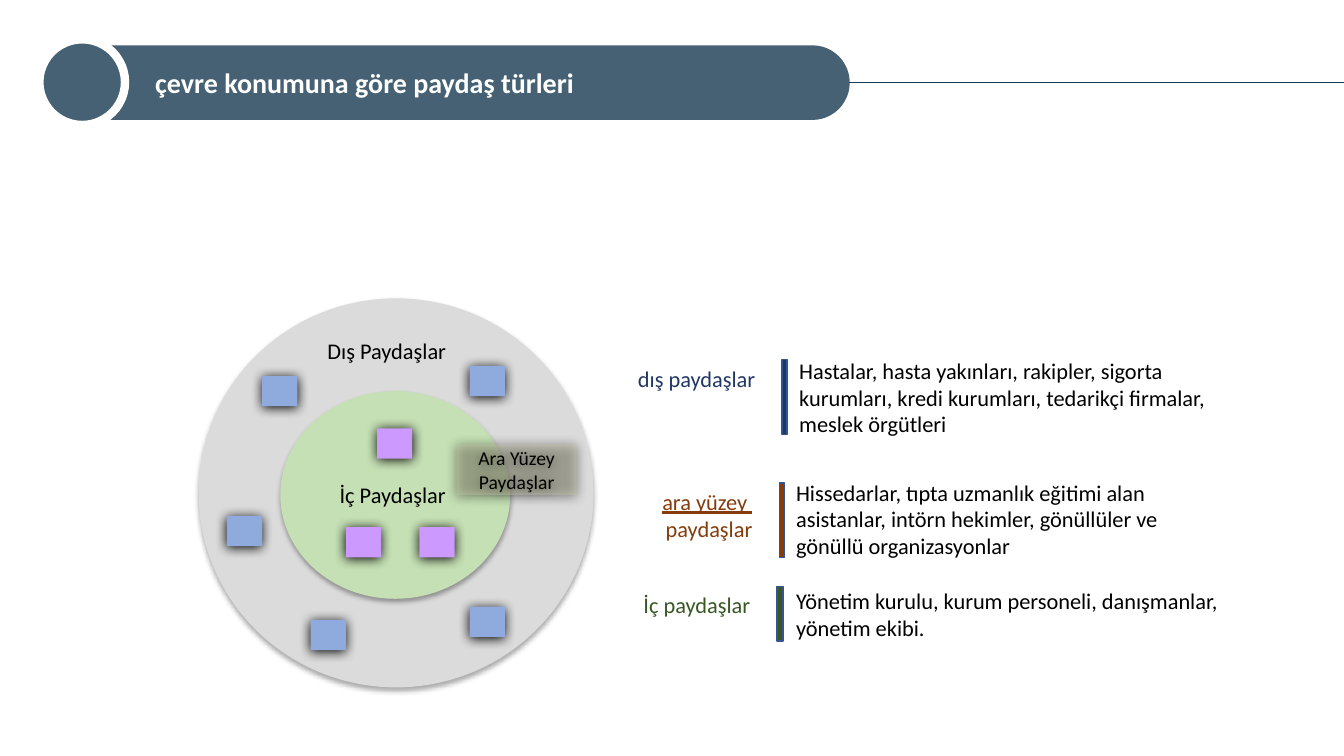
from dataclasses import dataclass
from typing import Optional

from lxml import etree
from pptx import Presentation
from pptx.dml.color import RGBColor
from pptx.enum.shapes import MSO_CONNECTOR, MSO_SHAPE
from pptx.enum.text import MSO_ANCHOR, MSO_AUTO_SIZE, PP_ALIGN
from pptx.oxml.ns import qn
from pptx.shapes.autoshape import Shape
from pptx.text.text import TextFrame
from pptx.util import Pt

RECT, OVAL, ROUNDED = MSO_SHAPE.RECTANGLE, MSO_SHAPE.OVAL, MSO_SHAPE.ROUNDED_RECTANGLE
STRAIGHT = MSO_CONNECTOR.STRAIGHT
LEFT, CENTER, RIGHT = PP_ALIGN.LEFT, PP_ALIGN.CENTER, PP_ALIGN.RIGHT
MIDDLE, TOP = MSO_ANCHOR.MIDDLE, MSO_ANCHOR.TOP
GROW = MSO_AUTO_SIZE.SHAPE_TO_FIT_TEXT

COLORS = {
    "slate": "456173", "white": "FFFFFF", "black": "000000", "rule": "1B3C59",
    "outer": "DBDBDB", "inner": "C5E0B4", "interface": "C5C4A7",
    "purple": "CC99FF", "blue": "8FAADC", "bar_edge": "325491",
    "navy": "203864", "brown": "843C0B", "green": "385723",
}
FONT = "Calibri"
SQUARE_WIDTH, SQUARE_HEIGHT = 25.2, 21.6
LABEL_OFFSET, LABEL_WIDTH, DESCRIPTION_WIDTH = 122.3, 110.2, 321.8


@dataclass(frozen=True)
class Box:
    left: float
    top: float
    width: float
    height: float

    def lengths(self) -> tuple:
        return tuple(Pt(v) for v in (self.left, self.top, self.width, self.height))


@dataclass(frozen=True)
class Shadow:
    opacity: int
    blur: float
    distance: float


@dataclass(frozen=True)
class Span:
    text: str
    underline: bool = False


@dataclass(frozen=True)
class Stakeholder:
    color: str
    bar: Box
    label: tuple
    label_height: float
    description: str
    description_left: float
    description_top: float
    description_height: float


SOFT = Shadow(32, 3.5, 2.2)
GLOW = Shadow(100, 8.5, 1)

SQUARES = {
    "purple": [(269.3, 306), (299.5, 376.6), (247, 376.6)],
    "blue": [(187.2, 268.6), (162, 368.6), (335.5, 261.4), (221.8, 442.8), (335.5, 433.4)],
}

STAKEHOLDERS = [
    Stakeholder("navy", Box(558.7, 257, 3.6, 53.3), (Span("dış paydaşlar"),), 26.6,
                "Hastalar, hasta yakınları, rakipler, sigorta kurumları, kredi kurumları, "
                "tedarikçi firmalar, meslek örgütleri", 563.8, 251.3, 65.5),
    Stakeholder("brown", Box(556.6, 344.9, 3.6, 53.3),
                (Span("ara yüzey ", True), Span(" paydaşlar")), 46.1,
                "Hissedarlar, tıpta uzmanlık eğitimi alan asistanlar, intörn hekimler, "
                "gönüllüler ve gönüllü organizasyonlar", 561.6, 338.4, 65.5),
    Stakeholder("green", Box(555.1, 419, 4.3, 38.9), (Span("İç paydaşlar"),), 26.6,
                "Yönetim kurulu, kurum personeli, danışmanlar, yönetim ekibi.",
                561.6, 416.2, 46.1),
]


def rgb(name: str) -> RGBColor:
    return RGBColor.from_string(COLORS[name])


def add_color(parent, name: str, opacity: int) -> None:
    color = etree.SubElement(parent, qn("a:srgbClr"), val=COLORS[name])
    etree.SubElement(color, qn("a:alpha"), val=str(opacity * 1000))


def cast_shadow(shape: Shape, shadow: Shadow) -> None:
    """Put a shadow straight below the shape."""
    effects = shape._element.spPr.find(qn("a:effectLst"))
    outer = etree.SubElement(effects, qn("a:outerShdw"), blurRad=str(Pt(shadow.blur)),
                             dist=str(Pt(shadow.distance)), dir="5400000",
                             algn="ctr", rotWithShape="0")
    add_color(outer, "black", shadow.opacity)


def add_figure(slide, kind: int, box: Box, fill: str, edge: Optional[str] = None,
               edge_width: float = 1, shadow: Optional[Shadow] = None,
               opacity: int = 100) -> Shape:
    figure = slide.shapes.add_shape(kind, *box.lengths())
    figure.shadow.inherit = False
    figure.fill.solid()
    figure.fill.fore_color.rgb = rgb(fill)
    if opacity < 100:
        solid = figure._element.spPr.find(qn("a:solidFill"))
        solid.remove(solid[0])
        add_color(solid, fill, opacity)
    if edge:
        figure.line.color.rgb = rgb(edge)
        figure.line.width = Pt(edge_width)
    else:
        figure.line.fill.background()
    if shadow:
        cast_shadow(figure, shadow)
    return figure


def write(frame: TextFrame, paragraphs: list, size: float = 16, color: str = "black",
          align: int = LEFT, anchor: int = MIDDLE, bold: bool = False) -> None:
    """Fill the frame; each paragraph is a sequence of spans."""
    frame.word_wrap = True
    frame.vertical_anchor = anchor
    for index, spans in enumerate(paragraphs):
        paragraph = frame.add_paragraph() if index else frame.paragraphs[0]
        paragraph.alignment = align
        for span in spans:
            run = paragraph.add_run()
            run.text = span.text
            font_format = {"name": FONT, "size": Pt(size), "bold": bold,
                           "underline": span.underline}
            for attribute, value in font_format.items():
                setattr(run.font, attribute, value)
            run.font.color.rgb = rgb(color)


def add_text(slide, box: Box, spans: tuple, color: str = "black", align: int = LEFT) -> None:
    frame = slide.shapes.add_textbox(*box.lengths()).text_frame
    write(frame, [spans], color=color, align=align, anchor=TOP)
    frame.auto_size = GROW


def draw_header(slide) -> None:
    banner = add_figure(slide, ROUNDED, Box(28.1, 32.4, 578.9, 53.3), "slate")
    banner.adjustments[0] = 0.5
    banner.text_frame.margin_left = Pt(75)
    write(banner.text_frame, [(Span("çevre konumuna göre paydaş türleri"),)],
          size=20, color="white", bold=True)
    add_figure(slide, OVAL, Box(28.1, 28.1, 61.2, 61.2), "slate", "white", 6)
    rule = slide.shapes.add_connector(STRAIGHT, Pt(606.2), Pt(59), Pt(960), Pt(59))
    rule.line.color.rgb = rgb("rule")
    rule.line.width = Pt(0.5)
    etree.SubElement(rule._element.spPr, qn("a:effectLst"))


def draw_circles(slide) -> None:
    add_figure(slide, OVAL, Box(141.8, 213.1, 282.2, 277.9), "outer", shadow=SOFT)
    inner = add_figure(slide, OVAL, Box(200.2, 279.4, 164.2, 148.3), "inner", shadow=SOFT)
    write(inner.text_frame, [(Span("İç Paydaşlar "),)], align=CENTER)
    add_text(slide, Box(226.8, 237.6, 121, 26.6), (Span("Dış Paydaşlar"),))
    for color, corners in SQUARES.items():
        for left, top in corners:
            add_figure(slide, RECT, Box(left, top, SQUARE_WIDTH, SQUARE_HEIGHT),
                       color, shadow=GLOW)
    interface = add_figure(slide, RECT, Box(326.2, 317.5, 85.7, 36), "interface",
                           shadow=GLOW, opacity=42)
    write(interface.text_frame, [(Span("Ara Yüzey"),), (Span("Paydaşlar"),)],
          size=14, align=CENTER)


def draw_stakeholder(slide, row: Stakeholder) -> None:
    add_figure(slide, RECT, row.bar, row.color, "bar_edge")
    label_box = Box(row.bar.left - LABEL_OFFSET, row.bar.top, LABEL_WIDTH, row.label_height)
    add_text(slide, label_box, row.label, row.color, RIGHT)
    description_box = Box(row.description_left, row.description_top,
                          DESCRIPTION_WIDTH, row.description_height)
    add_text(slide, description_box, (Span(row.description),))


def main() -> None:
    deck = Presentation()
    deck.slide_width, deck.slide_height = Pt(960), Pt(540)
    slide = deck.slides.add_slide(deck.slide_layouts[6])
    draw_header(slide)
    draw_circles(slide)
    for row in STAKEHOLDERS:
        draw_stakeholder(slide, row)
    deck.save("out.pptx")


if __name__ == "__main__":
    main()
